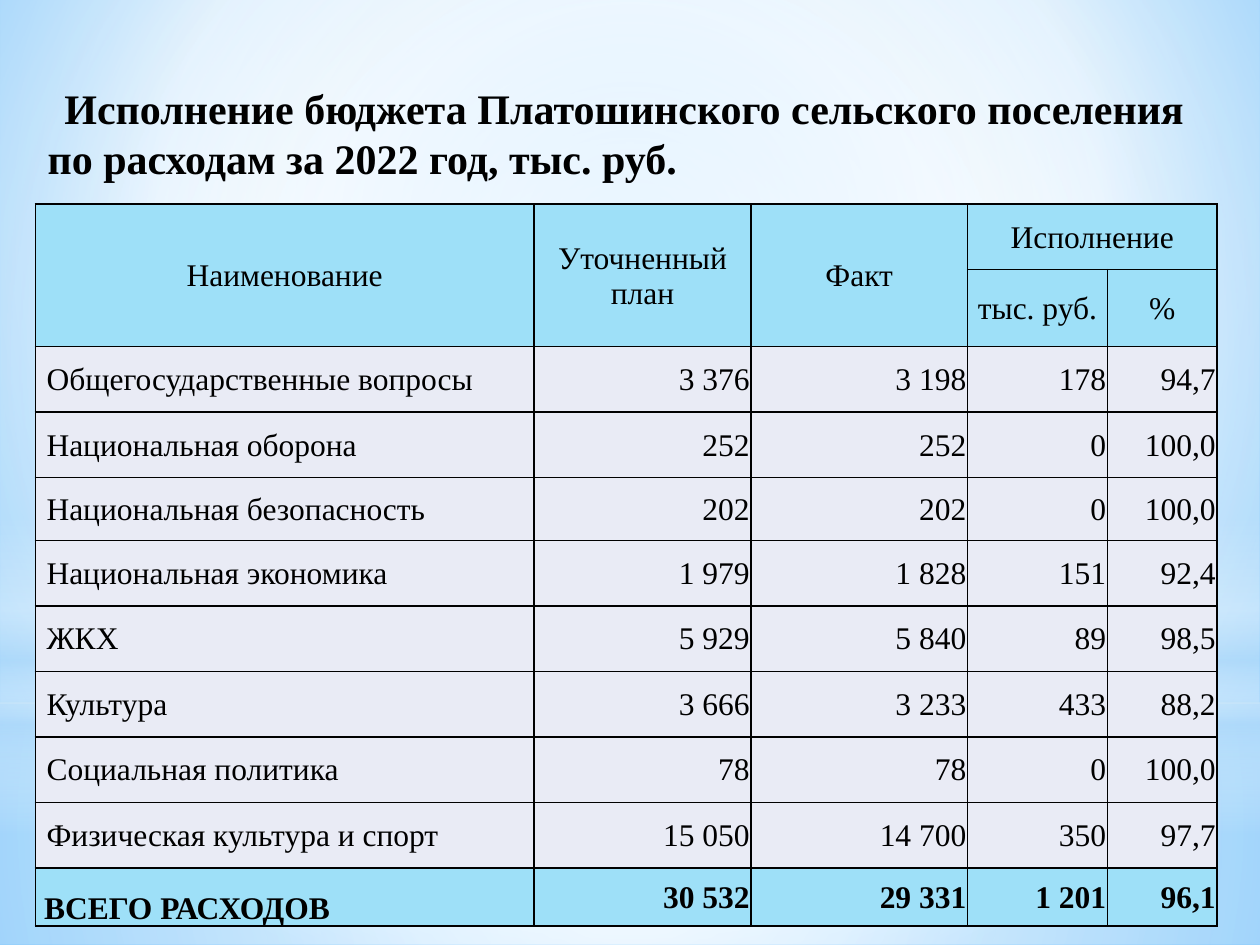
from dataclasses import dataclass

from lxml import etree
from pptx import Presentation
from pptx import util as u
from pptx.dml.color import RGBColor
from pptx.enum import shapes, text
from pptx.oxml import ns

COLORS = {
    "ink": "000000", "header": "9EE0F8", "body": "E9EBF5",
    "white": "FFFFFF", "mist": "B4DCFA", "sky": "9ED5FF", "azure": "5BB9FF",
}
FONT = "Times New Roman"
LEFT, CENTER, RIGHT = text.PP_ALIGN.LEFT, text.PP_ALIGN.CENTER, text.PP_ALIGN.RIGHT

TITLE = (
    ("Исполнение бюджета Платошинского сельского поселения", CENTER),
    ("по расходам за 2022 год, тыс. руб.", LEFT),
)
COLUMN_WIDTHS = (3.96, 1.72, 1.72, 1.11, 0.87)
ROW_HEIGHTS = (0.52, 0.44, 0.52, 0.52, 0.5, 0.52, 0.52, 0.52, 0.52, 0.52, 0.46)
HEADERS = (
    ("Наименование", "Уточненный план", "Факт", "Исполнение", ""),
    ("", "", "", "тыс. руб.", "%"),
)
EXPENSES = (
    ("Общегосударственные вопросы", "3 376", "3 198", "178", "94,7"),
    ("Национальная оборона", "252", "252", "0", "100,0"),
    ("Национальная безопасность", "202", "202", "0", "100,0"),
    ("Национальная экономика", "1 979", "1 828", "151", "92,4"),
    ("ЖКХ", "5 929", "5 840", "89", "98,5"),
    ("Культура", "3 666", "3 233", "433", "88,2"),
    ("Социальная политика", "78", "78", "0", "100,0"),
    ("Физическая культура и спорт", "15 050", "14 700", "350", "97,7"),
)
TOTAL = ("ВСЕГО РАСХОДОВ", "30 532", "29 331", "1 201", "96,1")


@dataclass(frozen=True)
class Stop:
    position: int
    color: str
    opacity: int = 100


@dataclass(frozen=True)
class Glow:
    kind: shapes.MSO_SHAPE
    top: float
    height: float
    stops: tuple[Stop, ...]
    radial: bool = True


@dataclass(frozen=True)
class CellStyle:
    fill: str
    align: text.PP_ALIGN
    bold: bool = False
    indent: float = 0
    anchor: text.MSO_ANCHOR = text.MSO_ANCHOR.MIDDLE


RECT, OVAL = shapes.MSO_SHAPE.RECTANGLE, shapes.MSO_SHAPE.OVAL
BACKDROP = (Stop(0, "sky"), Stop(60, "white"), Stop(100, "azure"))
GLOWS = (
    Glow(RECT, 5.58, 1.92,
         (Stop(0, "white", 91), Stop(37, "white", 76), Stop(100, "mist", 79))),
    Glow(RECT, 0, 5.58,
         (Stop(0, "white", 89), Stop(48, "white", 62), Stop(100, "mist", 79))),
    Glow(RECT, 4.12, 2.5,
         (Stop(0, "white", 0), Stop(29, "white", 30), Stop(45, "mist", 40),
          Stop(55, "white", 26), Stop(65, "mist", 60), Stop(100, "white", 0)),
         radial=False),
    Glow(OVAL, 1.75, 5.58, (Stop(0, "white"), Stop(56, "white", 0))),
)


def add_element(parent, tag: str, **attributes):
    return etree.SubElement(
        parent, ns.qn(tag), {name: str(value) for name, value in attributes.items()})


def set_gradient(fill, properties, stops: tuple[Stop, ...],
                 focus: tuple[int, ...] | None) -> None:
    """Fill radially around focus (left, top, right, bottom in %), or downwards without it."""
    fill.gradient()
    gradient = properties.find(ns.qn("a:gradFill"))
    for child in list(gradient):
        gradient.remove(child)
    stop_list = add_element(gradient, "a:gsLst")
    for stop in stops:
        mark = add_element(stop_list, "a:gs", pos=stop.position * 1000)
        color = add_element(mark, "a:srgbClr", val=COLORS[stop.color])
        if stop.opacity < 100:
            add_element(color, "a:alpha", val=stop.opacity * 1000)
    if focus:
        shade = add_element(gradient, "a:path", path="circle")
        sides = {side: percent * 1000 for side, percent in zip("ltrb", focus)}
        add_element(shade, "a:fillToRect", **sides)
    else:
        add_element(gradient, "a:lin", ang=90 * 60000, scaled=0)


def draw_backdrop(slide) -> None:
    fill = slide.background.fill
    set_gradient(fill, slide.element.find(".//" + ns.qn("p:bgPr")), BACKDROP, (20, 10, 20, 60))
    for glow in GLOWS:
        shape = slide.shapes.add_shape(
            glow.kind, 0, u.Inches(glow.top), u.Inches(10), u.Inches(glow.height))
        shape.shadow.inherit = False
        shape.line.fill.background()
        focus = (50, 50, 50, 50) if glow.radial else None
        set_gradient(shape.fill, shape.element.spPr, glow.stops, focus)


def add_span(para, words: str, size: int, bold: bool) -> None:
    span = para.add_run()
    span.text = words
    span.font.name = FONT
    span.font.size = u.Pt(size)
    span.font.bold = bold
    span.font.color.rgb = RGBColor.from_string(COLORS["ink"])


def draw_title(slide) -> None:
    box = slide.shapes.add_textbox(
        u.Inches(0.28), u.Inches(0.6), u.Inches(9.45), u.Inches(0.95))
    frame = box.text_frame
    frame.word_wrap = True
    frame.margin_left, frame.margin_right = u.Inches(0.1), u.Inches(0.2)
    for index, (words, align) in enumerate(TITLE):
        para = frame.add_paragraph() if index else frame.paragraphs[0]
        para.alignment = align
        para.line_spacing = u.Pt(29)
        add_span(para, words, 24, True)


def draw_cell(cell, words: str, style: CellStyle) -> None:
    cell.margin_left = cell.margin_top = cell.margin_right = u.Inches(0.01)
    cell.margin_bottom = 0
    cell.vertical_anchor = style.anchor
    properties = cell._tc.get_or_add_tcPr()
    for side in ("a:lnL", "a:lnR", "a:lnT", "a:lnB"):
        border = add_element(properties, side, w=u.Pt(1))
        add_element(add_element(border, "a:solidFill"), "a:srgbClr", val=COLORS["ink"])
    cell.fill.solid()
    cell.fill.fore_color.rgb = RGBColor.from_string(COLORS[style.fill])
    if words:
        para = cell.text_frame.paragraphs[0]
        para.alignment = style.align
        if style.indent:
            para._p.get_or_add_pPr().set("marL", str(u.Inches(style.indent)))
        add_span(para, words, 18, style.bold)


def draw_table(slide) -> None:
    rows = (*HEADERS, *EXPENSES, TOTAL)
    table = slide.shapes.add_table(
        len(rows), len(COLUMN_WIDTHS), u.Inches(0.28), u.Inches(1.62),
        u.Inches(sum(COLUMN_WIDTHS)), u.Inches(sum(ROW_HEIGHTS))).table
    table.first_row = table.horz_banding = False
    for column, width in zip(table.columns, COLUMN_WIDTHS):
        column.width = u.Inches(width)
    for row, height in zip(table.rows, ROW_HEIGHTS):
        row.height = u.Inches(height)

    header = CellStyle("header", CENTER)
    name, value = CellStyle("body", LEFT, indent=0.08), CellStyle("body", RIGHT)
    total_name = CellStyle("header", LEFT, True, 0.06, text.MSO_ANCHOR.BOTTOM)
    total_value = CellStyle("header", RIGHT, True)
    styles = ([(header, header)] * len(HEADERS) + [(name, value)] * len(EXPENSES)
              + [(total_name, total_value)])
    for r, (row, (first, other)) in enumerate(zip(rows, styles)):
        for c, words in enumerate(row):
            draw_cell(table.cell(r, c), words, other if c else first)
    for c in range(3):
        table.cell(0, c).merge(table.cell(1, c))
    table.cell(0, 3).merge(table.cell(0, 4))


def main() -> None:
    deck = Presentation()
    deck.slide_width, deck.slide_height = u.Inches(10), u.Inches(7.5)
    slide = deck.slides.add_slide(deck.slide_layouts[6])
    draw_backdrop(slide)
    draw_title(slide)
    draw_table(slide)
    deck.save("out.pptx")


if __name__ == "__main__":
    main()
